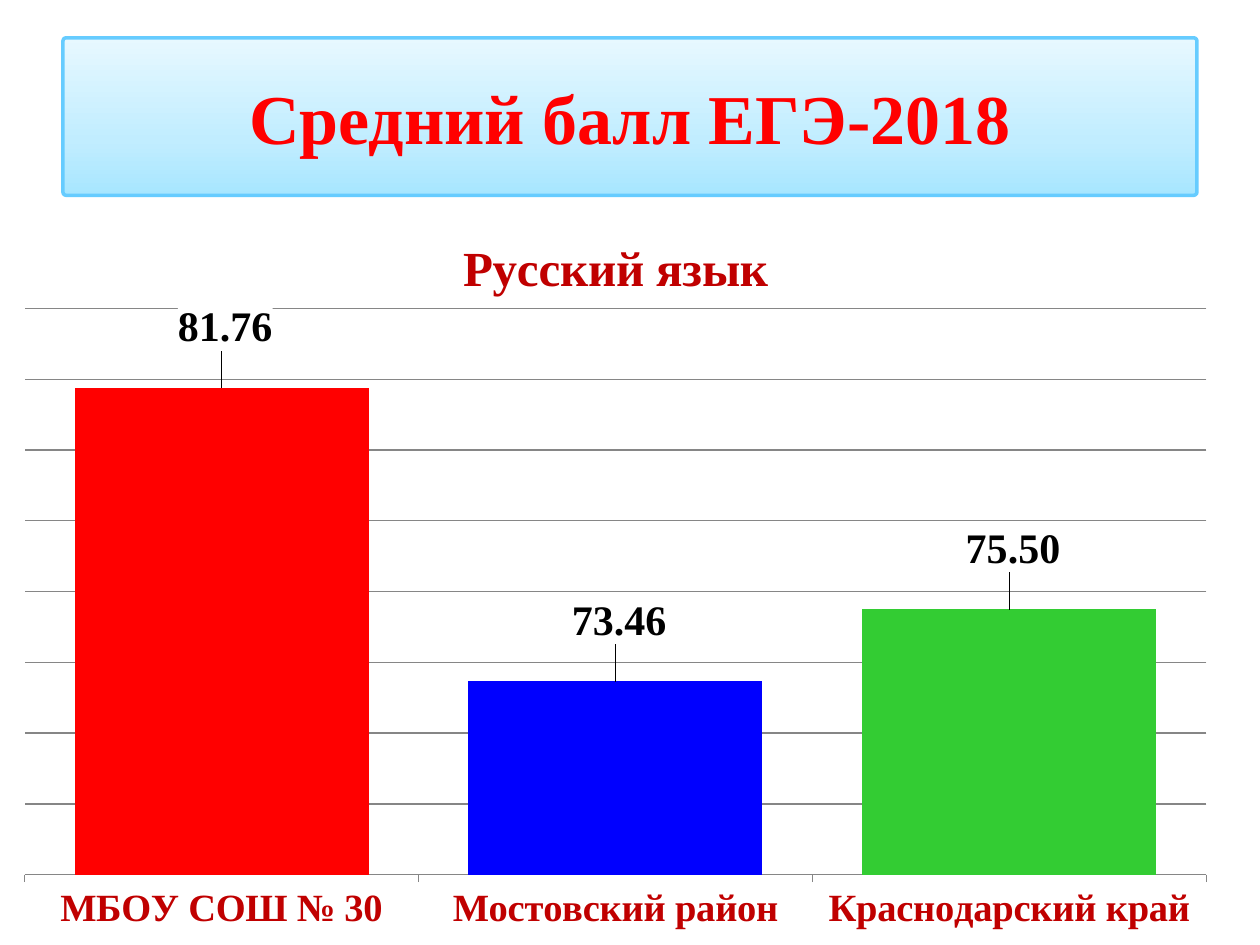
from copy import deepcopy

from lxml import etree
from pptx import Presentation
from pptx.chart.data import CategoryChartData
from pptx.dml.color import RGBColor
from pptx.enum import chart as charts, shapes, text
from pptx.oxml import parse_xml
from pptx.oxml.ns import nsdecls, qn
from pptx.util import Inches, Pt

HEADING = "Средний балл ЕГЭ-2018"
SUBJECT = "Русский язык"
SCORES = [
    ("МБОУ СОШ № 30", 81.76, "red"),
    ("Мостовский район", 73.46, "blue"),
    ("Краснодарский край", 75.5, "green"),
]
COLORS = {
    "red": "FF0000", "blue": "0000FF", "green": "33CC33", "purple": "CC00FF",
    "dark_red": "C00000", "black": "000000", "grid": "868686", "border": "66CCFF",
}
BANNER_STOPS = [(0, "A7E6FF"), (0.35, "C1EDFF"), (1, "E7F8FF")]
FONT = "Times New Roman"
NUMBER_FORMAT = "0.00"
LABEL_LIFT = -0.043  # share of the chart height


def color(name):
    return RGBColor.from_string(COLORS[name])


def style(font, size, name):
    font.name, font.size, font.bold = FONT, Pt(size), True
    font.color.rgb = color(name)


def layout(x, y, width=None, height=None):
    """Manual chart layout: an inner plot area with a size, else a label offset."""
    fields = [("x", x), ("y", y)]
    if width is not None:
        fields = [("layoutTarget", "inner"), ("xMode", "edge"), ("yMode", "edge"),
                  *fields, ("w", width), ("h", height)]
    inner = "".join(f'<c:{tag} val="{value}"/>' for tag, value in fields)
    return parse_xml(f'<c:layout {nsdecls("c")}><c:manualLayout>{inner}'
                     "</c:manualLayout></c:layout>")


def add_banner(page):
    banner = page.shapes.add_shape(shapes.MSO_SHAPE.ROUNDED_RECTANGLE,
                                   Inches(0.5), Inches(0.3), Inches(9), Inches(1.25))
    banner.adjustments[0] = 0.02
    banner.shadow.inherit = False
    banner.line.color.rgb = color("border")
    banner.line.width = Pt(2)
    banner.fill.gradient()
    banner.fill.gradient_angle = 90
    stop_list = banner.fill._fill._gradFill.gsLst
    stop_list.append(deepcopy(stop_list[-1]))
    for stop, (position, shade) in zip(banner.fill.gradient_stops, BANNER_STOPS):
        stop.position = position
        stop.color.rgb = RGBColor.from_string(shade)
    frame = banner.text_frame
    frame.text = HEADING
    frame.vertical_anchor = text.MSO_ANCHOR.MIDDLE
    frame.paragraphs[0].alignment = text.PP_ALIGN.CENTER
    style(frame.paragraphs[0].runs[0].font, 40, "red")


def format_axes(chart):
    category_axis, value_axis = chart.category_axis, chart.value_axis
    style(category_axis.tick_labels.font, 22, "dark_red")
    category_axis.major_tick_mark = charts.XL_TICK_MARK.OUTSIDE
    category_axis.format.line.color.rgb = color("grid")
    value_axis.visible = False
    value_axis.minimum_scale, value_axis.maximum_scale = 68, 84
    value_axis.major_unit = 2
    value_axis.tick_labels.number_format = NUMBER_FORMAT
    value_axis.tick_labels.number_format_is_linked = False
    value_axis.major_gridlines.format.line.color.rgb = color("grid")


def format_label(label):
    """White-backed value label, lifted above its bar."""
    style(label.font, 24, "black")
    label.position = charts.XL_LABEL_POSITION.OUTSIDE_END
    element = label._get_or_add_dLbl()
    number = etree.Element(qn("c:numFmt"), formatCode=NUMBER_FORMAT, sourceLinked="0")
    backing = parse_xml(f'<c:spPr {nsdecls("c", "a")}><a:solidFill>'
                        '<a:srgbClr val="FFFFFF"/></a:solidFill></c:spPr>')
    for old in element.findall(qn("c:spPr")):
        element.remove(old)
    for place, part in enumerate([layout(0.003, LABEL_LIFT), number, backing], 1):
        element.insert(place, part)


def add_score_chart(page):
    data = CategoryChartData(number_format=NUMBER_FORMAT)
    data.categories = [name for name, _, _ in SCORES]
    data.add_series("Series 1", [score for _, score, _ in SCORES])
    chart = page.shapes.add_chart(charts.XL_CHART_TYPE.COLUMN_CLUSTERED, Inches(0),
                                  Inches(1.64), Inches(9.77), Inches(5.86), data).chart
    chart.font.name, chart.font.size = "Calibri", Pt(10)
    chart.font.color.rgb = color("black")
    chart.has_legend = False
    chart.has_title = True
    title = chart.chart_title
    title.include_in_layout = False
    title.text_frame.text = SUBJECT
    style(title.text_frame.paragraphs[0].runs[0].font, 28, "dark_red")
    format_axes(chart)

    plot = chart.plots[0]
    plot.gap_width = 34
    plot.vary_by_categories = False
    series = plot.series[0]
    series.format.fill.solid()
    series.format.fill.fore_color.rgb = color("purple")
    labels = series.data_labels
    labels.show_value = True
    labels.number_format = NUMBER_FORMAT
    labels.number_format_is_linked = False
    style(labels.font, 24, "black")
    for index, (_, _, bar_color) in enumerate(SCORES):
        point = series.points[index]
        point.format.fill.solid()
        point.format.fill.fore_color.rgb = color(bar_color)
        format_label(point.data_label)

    plot_area = chart._chartSpace.chart.plotArea
    for old in plot_area.findall(qn("c:layout")):
        plot_area.remove(old)
    plot_area.insert(0, layout(0.02, 0.138, 0.96, 0.767))


def main():
    deck = Presentation()
    deck.slide_width, deck.slide_height = Inches(10), Inches(7.5)
    page = deck.slides.add_slide(deck.slide_layouts[6])
    add_banner(page)
    add_score_chart(page)
    deck.save("out.pptx")


if __name__ == "__main__":
    main()
